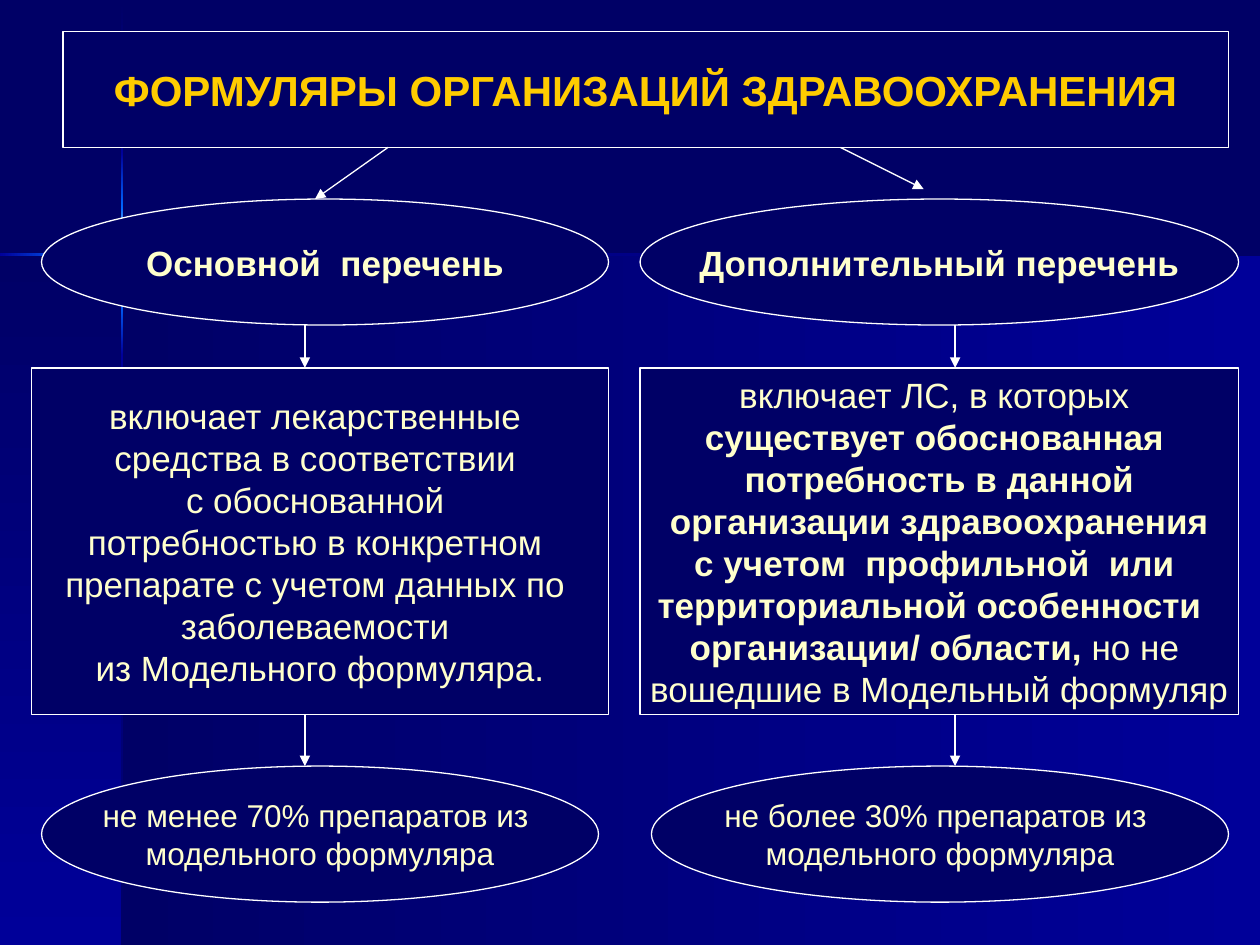
from copy import deepcopy

from lxml import etree
from pptx import Presentation
from pptx.dml.color import RGBColor
from pptx.enum.shapes import MSO_CONNECTOR, MSO_SHAPE
from pptx.enum.text import MSO_ANCHOR, PP_ALIGN
from pptx.oxml.ns import qn
from pptx.util import Inches, Pt

RECT, OVAL = MSO_SHAPE.RECTANGLE, MSO_SHAPE.OVAL
STRAIGHT = MSO_CONNECTOR.STRAIGHT
MIDDLE, CENTER = MSO_ANCHOR.MIDDLE, PP_ALIGN.CENTER
NAVY, BLUE, BRIGHT = "000066", "000099", "0066FF"
CREAM, GOLD, WHITE = "FFFFCC", "FFCC00", "FFFFFF"
ACROSS, DOWN = 0, 270


def color(hex_value):
    return RGBColor.from_string(hex_value)


class FormularySlide:
    """Draws styled elements on the current slide."""

    def __init__(self, slide):
        self.slide = slide
        self.font_name = "Arial"
        self.line_width = Pt(0.75)
        background = slide.background.fill
        background.solid()
        background.fore_color.rgb = color(NAVY)

    def shape(self, kind, box):
        shape = self.slide.shapes.add_shape(kind, *map(Inches, box))
        shape.shadow.inherit = False
        return shape

    def gradient(self, box, direction, *hues):
        band = self.shape(RECT, box)
        band.line.fill.background()
        band.fill.gradient()
        band.fill.gradient_angle = direction
        stop_list = next(band._element.spPr.iter(qn("a:gsLst")))
        for _ in hues[2:]:
            stop_list.append(deepcopy(stop_list[-1]))
        for index, (stop, hue) in enumerate(zip(band.fill.gradient_stops, hues)):
            stop.position = index / (len(hues) - 1)
            stop.color.rgb = color(hue)

    def node(self, kind, box, lines, size=20, bold=False, hue=CREAM):
        node = self.shape(kind, box)
        node.fill.solid()
        node.fill.fore_color.rgb = color(NAVY)
        node.line.color.rgb = color(WHITE)
        node.line.width = self.line_width
        frame = node.text_frame
        frame.word_wrap = False
        frame.vertical_anchor = MIDDLE
        for index, line in enumerate(lines):
            paragraph = frame.add_paragraph() if index else frame.paragraphs[0]
            self.text_line(paragraph, line, size, bold, hue)

    def text_line(self, paragraph, line, size, bold, hue):
        paragraph.alignment = CENTER
        font = paragraph.font
        font.name, font.size = self.font_name, Pt(size)
        font.color.rgb = color(hue)
        runs = [(line, bold)] if isinstance(line, str) else line
        if len(runs) == 1:
            font.bold = runs[0][1]
        for text, weight in runs:
            run = paragraph.add_run()
            run.text = text
            if len(runs) > 1:
                run.font.bold = weight

    def arrow(self, x1, y1, x2, y2):
        arrow = self.slide.shapes.add_connector(STRAIGHT, *map(Inches, (x1, y1, x2, y2)))
        arrow.line.color.rgb = color(WHITE)
        arrow.line.width = self.line_width
        etree.SubElement(arrow.line._get_or_add_ln(), qn("a:tailEnd"), type="triangle")
        etree.SubElement(arrow._element.spPr, qn("a:effectLst"))


def draw_backdrop(page):
    page.gradient((0.97, 2.02, 9.03, 5.48), ACROSS, NAVY, BLUE)
    page.gradient((0, 2.02, 0.97, 5.48), DOWN, NAVY, BLUE)
    glow = (BRIGHT, CREAM, BRIGHT)
    for top, height, hues in (
        (0.01, 1.2, (NAVY, BLUE)),
        (2.82, 4.68, (BLUE, NAVY)),
        (2.38, 0.44, (BRIGHT, BLUE)),
        (1.21, 0.44, (BLUE, BRIGHT)),
        (1.65, 0.73, glow),
    ):
        page.gradient((0.96, top, 0.02, height), DOWN, *hues)
    for left, width, hues in (
        (1.77, 8.23, (BLUE, NAVY)),
        (0, 0.61, (BLUE, BRIGHT)),
        (1.33, 0.44, (BRIGHT, BLUE)),
        (0.6, 0.73, glow),
    ):
        page.gradient((left, 2.01, width, 0.02), ACROSS, *hues)


def draw_scheme(page):
    page.node(RECT, (0.5, 0.25, 9.25, 0.92),
              ["ФОРМУЛЯРЫ ОРГАНИЗАЦИЙ ЗДРАВООХРАНЕНИЯ"], 24, True, GOLD)
    page.node(OVAL, (0.33, 1.58, 4.5, 1), ["Основной  перечень"], bold=True)
    page.node(OVAL, (5.08, 1.58, 4.75, 1), ["Дополнительный перечень"], bold=True)
    page.arrow(3.08, 1.17, 2.5, 1.58)
    page.arrow(6.67, 1.17, 7.33, 1.5)
    page.node(RECT, (0.25, 2.92, 4.58, 2.75), [
        "включает лекарственные ",
        "средства в соответствии ",
        "с обоснованной ",
        "потребностью в конкретном ",
        "препарате с учетом данных по ",
        "заболеваемости ",
        "из Модельного формуляра.",
    ])
    page.node(RECT, (5.08, 2.92, 4.75, 2.75), [
        [("включает ЛС, в которых ", False)],
        "существует обоснованная ",
        "потребность в данной",
        " организации здравоохранения ",
        "с учетом  профильной  или ",
        "территориальной особенности  ",
        [("организации/ области,", True), (" но не ", False)],
        [("вошедшие в Модельный формуляр", False)],
    ], bold=True)
    for box, share in (
        ((0.33, 6.08, 4.42, 1.08), "не менее 70%"),
        ((5.17, 6.08, 4.58, 1.08), "не более 30%"),
    ):
        page.node(OVAL, box, [f"{share} препаратов из ", "модельного формуляра"], 18)
    for top, bottom in ((2.58, 2.92), (5.67, 6.08)):
        for x in (2.42, 7.58):
            page.arrow(x, top, x, bottom)


def main():
    deck = Presentation()
    deck.slide_width, deck.slide_height = Inches(10), Inches(7.5)
    page = FormularySlide(deck.slides.add_slide(deck.slide_layouts[6]))
    draw_backdrop(page)
    draw_scheme(page)
    deck.save("out.pptx")


if __name__ == "__main__":
    main()
